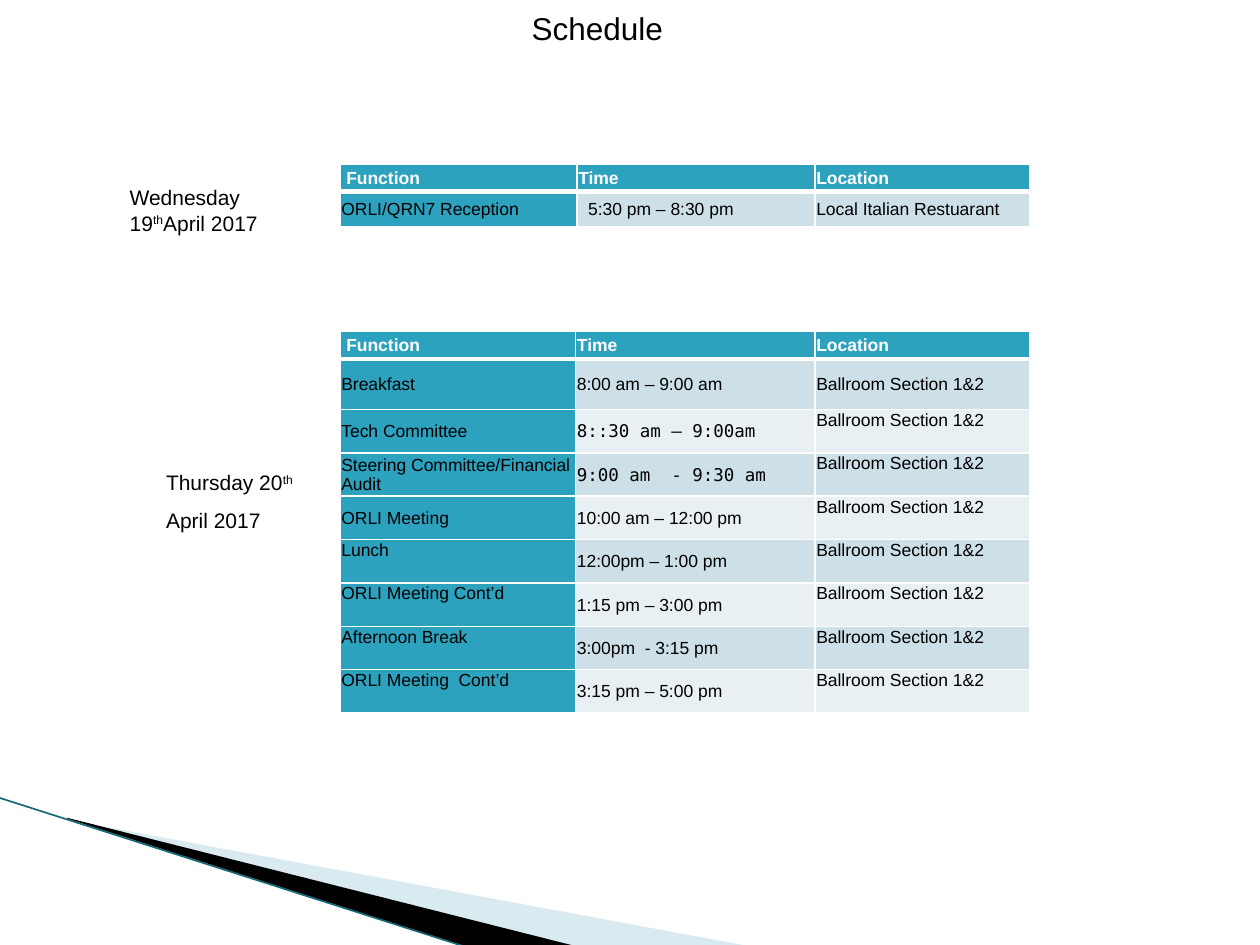
from dataclasses import dataclass

from lxml.etree import SubElement
from pptx import Presentation
from pptx.dml.color import RGBColor as RGB
from pptx.enum.shapes import MSO_CONNECTOR as LINK
from pptx.enum.text import MSO_ANCHOR as ANCHOR, PP_ALIGN as ALIGN
from pptx.oxml.ns import qn
from pptx.util import Pt


@dataclass(frozen=True)
class Theme:
    sans: str = "Arial"
    mono: str = "DejaVu Sans Mono"
    ink: str = "000000"
    white: str = "FFFFFF"
    teal: str = "2DA2BF"
    bands: tuple = ("CDE0E8", "E8F0F4")
    pale: str = "A0CBDC"
    edge: str = "16697A"
    title: int = 18
    label: int = 12
    cell: int = 10


THEME = Theme()
HEADS = ("Function", "Time", "Location")
ROOM = "Ballroom Section 1&2"
FIRST = [("ORLI/QRN7 Reception", "5:30 pm – 8:30 pm", "Local Italian Restuarant")]
SECOND = [
    ("Breakfast", "8:00 am – 9:00 am", ROOM),
    ("Tech Committee", "8::30 am – 9:00am", ROOM),
    ("Steering Committee/Financial Audit", "9:00 am  - 9:30 am", ROOM),
    ("ORLI Meeting", "10:00 am – 12:00 pm", ROOM),
    ("Lunch", "12:00pm – 1:00 pm", ROOM),
    ("ORLI Meeting Cont’d", "1:15 pm – 3:00 pm", ROOM),
    ("Afternoon Break", "3:00pm  - 3:15 pm", ROOM),
    ("ORLI Meeting  Cont’d", "3:15 pm – 5:00 pm", ROOM),
]


def add_run(para, text, size, color=THEME.ink, face=THEME.sans, bold=False):
    run = para.add_run()
    run.text = text
    font = run.font
    font.name, font.size, font.bold = face, Pt(size), bold
    font.color.rgb = RGB.from_string(color)
    return run


def add_wedge(slide, x, y, points, color, alpha=None):
    spots = [(Pt(x + dx), Pt(y + dy)) for dx, dy in points]
    pen = slide.shapes.build_freeform(*spots[0], scale=1.0)
    pen.add_line_segments(spots[1:], close=True)
    wedge = pen.convert_to_shape()
    wedge.shadow.inherit = False
    wedge.fill.solid()
    wedge.fill.fore_color.rgb = RGB.from_string(color)
    wedge.line.fill.background()
    if alpha:
        tint = wedge.fill._xPr.find(".//" + qn("a:srgbClr"))
        SubElement(tint, qn("a:alpha"), val=str(alpha * 1000))


def add_corner(slide, x, y):
    # Two wedges and the thin edge below them
    add_wedge(slide, x, y, [(39.6, 12.7), (428.4, 84.7), (328.3, 84.7), (39.6, 12)],
              THEME.pale, 40)
    add_wedge(slide, x, y, [(38.2, 11.3), (329, 84.7), (267.8, 85.4), (38.9, 12)],
              THEME.ink)
    edge = slide.shapes.add_connector(
        LINK.STRAIGHT, Pt(x - 0.7), Pt(y - 0.2), Pt(x + 267.1), Pt(y + 85.4))
    edge.line.width = Pt(0.95)
    edge.line.color.rgb = RGB.from_string(THEME.edge)
    SubElement(edge._element.spPr, qn("a:effectLst"))


def add_title(slide, x, y, w, h):
    title = slide.shapes.title
    title.left, title.top, title.width, title.height = Pt(x), Pt(y), Pt(w), Pt(h)
    frame = title.text_frame
    frame.vertical_anchor = ANCHOR.TOP
    para = frame.paragraphs[0]
    para.alignment = ALIGN.LEFT
    add_run(para, "Schedule", THEME.title)


def add_label(slide, x, y, w, h, lines, gap=0):
    # Each line is a list of (text, raised) runs
    frame = slide.shapes.add_textbox(Pt(x), Pt(y), Pt(w), Pt(h)).text_frame
    frame.word_wrap = True
    for i, line in enumerate(lines):
        para = frame.add_paragraph() if i else frame.paragraphs[0]
        if i:
            para.space_before = Pt(gap)
        for text, raised in line:
            run = add_run(para, text, THEME.label)
            if raised:
                run._r.get_or_add_rPr().set("baseline", "30000")


def set_edges(cell, base):
    props = cell._tc.get_or_add_tcPr()
    for side, width in (("L", 1), ("R", 1), ("T", 1), ("B", base)):
        line = SubElement(props, qn("a:ln" + side), w=str(Pt(width)))
        fill = SubElement(line, qn("a:solidFill"))
        SubElement(fill, qn("a:srgbClr"), val=THEME.white)


def fill_cell(cell, text, fill, head=False, face=THEME.sans, inset=0.7,
              anchor=ANCHOR.MIDDLE):
    set_edges(cell, 3 if head else 1)
    cell.fill.solid()
    cell.fill.fore_color.rgb = RGB.from_string(fill)
    cell.margin_left, cell.margin_right = Pt(inset), Pt(0.7)
    cell.margin_top, cell.margin_bottom = Pt(0.7), Pt(0)
    cell.vertical_anchor = anchor
    color = THEME.white if head else THEME.ink
    add_run(cell.text_frame.paragraphs[0], text, THEME.cell, color, face, head)


def add_plan(slide, x, y, cols, rows, items, mono=(), tops=(99, 99, 99), indent=0.7):
    # tops: first row of each column whose text sits at the top
    grid = slide.shapes.add_table(len(rows), len(cols), Pt(x), Pt(y),
                                  Pt(sum(cols)), Pt(sum(rows))).table
    grid.horz_banding = False
    for col, width in zip(grid.columns, cols):
        col.width = Pt(width)
    for row, height in zip(grid.rows, rows):
        row.height = Pt(height)
    for c, text in enumerate(HEADS):
        fill_cell(grid.cell(0, c), text, THEME.teal, True, inset=0.7 if c else 3.5)
    for r, item in enumerate(items, 1):
        for c, text in enumerate(item):
            fill_cell(
                grid.cell(r, c), text,
                THEME.bands[(r - 1) % 2] if c else THEME.teal,
                face=THEME.mono if c == 1 and r in mono else THEME.sans,
                inset=indent if c == 1 else 0.7,
                anchor=ANCHOR.TOP if r >= tops[c] else ANCHOR.MIDDLE)


def main():
    deck = Presentation()
    deck.slide_width, deck.slide_height = Pt(720), Pt(540)
    slide = deck.slides.add_slide(deck.slide_layouts[5])

    add_corner(slide, 0, 456)
    add_title(slide, 296.6, 1.4, 126, 28.8)

    # Wednesday
    add_label(slide, 67, 102.2, 113.8, 36,
              [[("Wednesday 19", False), ("th", True), ("April 2017", False)]])
    add_plan(slide, 194.4, 93.6, (135.4, 136, 122.4), (15.8, 20.2), FIRST, indent=6.3)

    # Thursday
    add_label(slide, 87.8, 265, 92.9, 43.9,
              [[("Thursday 20", False), ("th", True)], [("April 2017", False)]], gap=6.9)
    add_plan(slide, 194.4, 189.4, (134.6, 136.8, 122.4), (15.8, 28.8) + (24.8,) * 7,
             SECOND, mono=(2, 3), tops=(5, 99, 2))

    deck.save("out.pptx")


if __name__ == "__main__":
    main()
